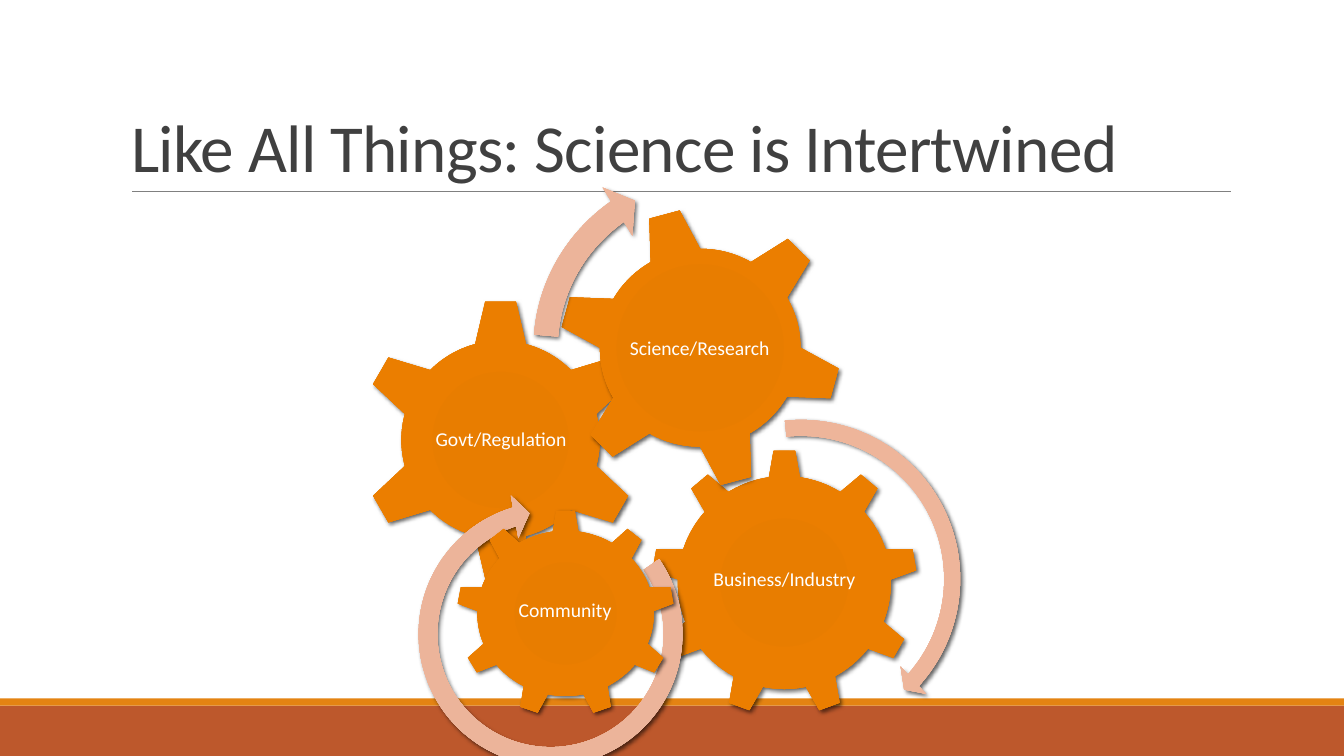
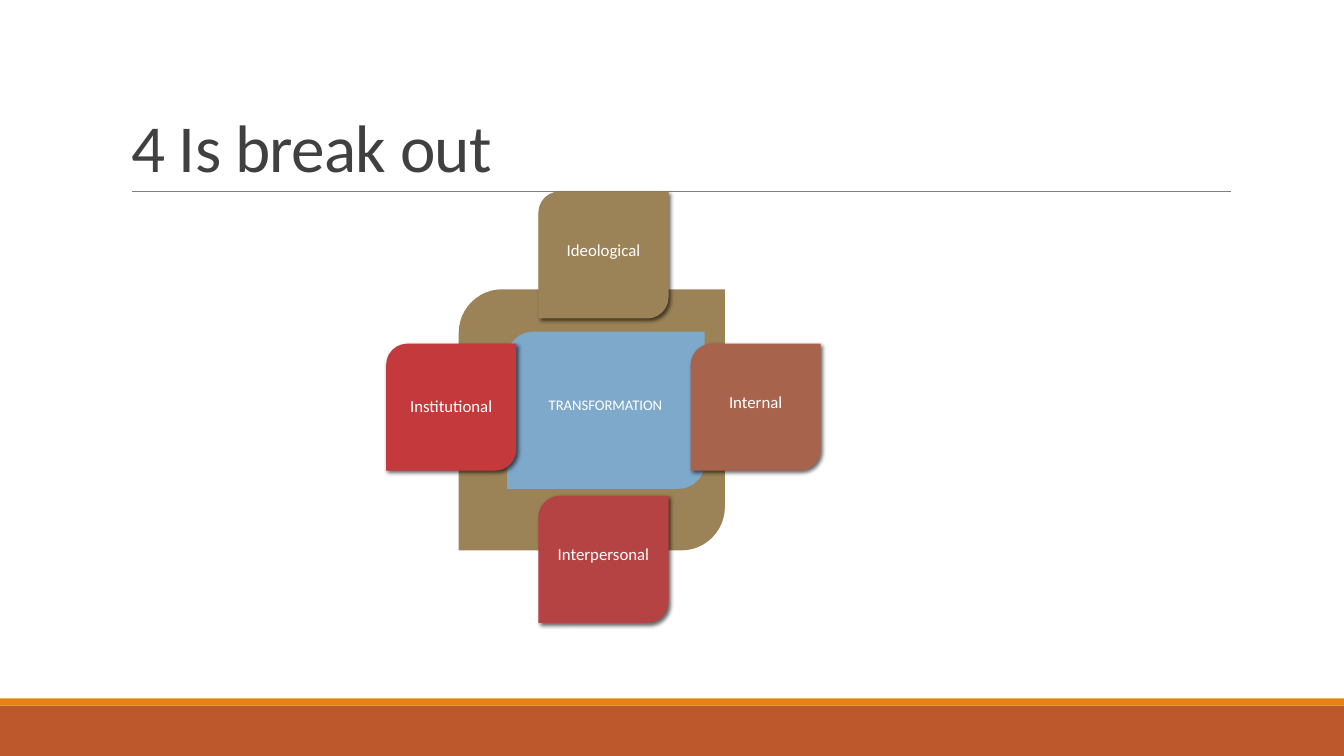
from lxml.etree import SubElement
from pptx import Presentation
from pptx.dml.color import RGBColor
from pptx.enum.shapes import MSO_CONNECTOR, MSO_SHAPE
from pptx.enum.text import MSO_ANCHOR, MSO_AUTO_SIZE, PP_ALIGN
from pptx.oxml import parse_xml
from pptx.oxml.ns import nsdecls, qn
from pptx.util import Inches, Pt

FONT = "Calibri"
COLORS = {
    "band": "BD582C", "stripe": "E48312", "rule": "808080",
    "title": "404040", "label": "FFFFFF",
    "olive": "9B8357", "brown": "A8634D", "rose": "B64343",
    "red": "C4393B", "blue": "7EA9CA",
}
GRADIENTS = {
    "gear": [(0, "E57B00"), (34, "E87D00"), (70, "EB7E00"), (100, "EF8407")],
    "arrow": [(0, "E8B196"), (34, "E9B399"), (70, "EEB59A"), (100, "F3C0A8")],
}

# Slide 1: gears and arrows, from back to front
GEARS_TITLE = "Like All Things: Science is Intertwined"
GEARS = [  # label, label area, gear shape, gear area, rotation
    ("Business/Industry", (6.99, 5.08, 1.58, 1.36),
     MSO_SHAPE.GEAR_9, (6.46, 4.46, 2.64, 2.64), 0),
    ("Govt/Regulation", (4.27, 3.67, 1.4, 1.39),
     MSO_SHAPE.GEAR_6, (3.56, 2.96, 2.81, 2.81), 0),
    ("Science/Research", (6.15, 2.67, 1.58, 1.58),
     MSO_SHAPE.GEAR_6, (5.53, 2.05, 2.83, 2.8), 345),
]
FRONT_GEAR = ("Community", (4.96, 5.54, 1.29, 1.05),
              MSO_SHAPE.GEAR_9, (4.53, 5.06, 2.16, 2.05), 0)
ARROWS = [  # area, rotation, band %, head / end / start degrees, head %
    ((6.26, 4.06, 3.37, 3.37), 0, (4.7, 4.98, 42.01, 264.2, 5.5)),
    ((4.03, 4.86, 2.86, 2.86), 78.1, (6.5, 7.17, 174.82, 247.3, 7.5)),
    ((5.13, 1.49, 4.18, 3.99), 9.8, (6, 6.57, 221.9, 175.14, 7)),
]

# Slide 2: four cards around a centre
CARDS_TITLE = "4 Is break out"
CARDS = [  # label, colour, direction from the centre, label height
    ("Ideological", "olive", (0, -1), 0.44),
    ("Internal", "brown", (1, 0), 0.44),
    ("Interpersonal", "rose", (0, 1), 0.44),
    ("Institutional", "red", (-1, 0), 0.52),
]
CARD_WIDTH, CARD_HEIGHT, CARD_REACH = 1.29, 1.26, 1.51
CARD_CENTRE = (5.34, 3.41)  # left and top of a card with no offset
LABEL_WIDTH, LABEL_TOP = 1.09, 0.37


def rgb(name):
    return RGBColor.from_string(COLORS[name])


def add_plain(page, kind, area, color=None):
    shape = page.shapes.add_shape(kind, *map(Inches, area))
    shape.shadow.inherit = False
    shape.line.fill.background()
    if color:
        shape.fill.solid()
        shape.fill.fore_color.rgb = rgb(color)
    return shape


def add_shadow(shape):
    effects = shape.element.spPr.find(qn("a:effectLst"))
    effects.append(parse_xml(
        f'<a:outerShdw {nsdecls("a")} blurRad="{Pt(3)}" dist="{Pt(2)}" '
        'dir="2700000" algn="ctr" rotWithShape="0">'
        '<a:srgbClr val="000000"><a:alpha val="60000"/></a:srgbClr>'
        '</a:outerShdw>'))


def set_gradient(shape, name):
    stops = "".join(
        f'<a:gs pos="{place * 1000}"><a:srgbClr val="{color}"/></a:gs>'
        for place, color in GRADIENTS[name])
    shape.fill.gradient()
    properties = shape.element.spPr
    properties.replace(properties.find(qn("a:gradFill")), parse_xml(
        f'<a:gradFill {nsdecls("a")} rotWithShape="1"><a:gsLst>{stops}</a:gsLst>'
        '<a:path path="circle"><a:fillToRect l="100000" t="100000" '
        'r="100000" b="100000"/></a:path></a:gradFill>'))


def add_label(page, text, area, size):
    box = page.shapes.add_textbox(*map(Inches, area))
    frame = box.text_frame
    frame.word_wrap = True
    frame.vertical_anchor = MSO_ANCHOR.MIDDLE
    frame.margin_left = frame.margin_right = Inches(0.02)
    frame.margin_top = frame.margin_bottom = Inches(0.02)
    frame.text = text
    para = frame.paragraphs[0]
    para.alignment = PP_ALIGN.CENTER
    para.line_spacing = 0.9
    font = para.runs[0].font
    font.name, font.size, font.color.rgb = FONT, Pt(size), rgb("label")


def add_gear(page, text, label_area, kind, area, rotation):
    gear = add_plain(page, kind, area)
    gear.rotation = rotation
    set_gradient(gear, "gear")
    add_shadow(gear)
    add_label(page, text, label_area, 14)


def add_arrow(page, area, rotation, settings):
    arrow = add_plain(page, MSO_SHAPE.CIRCULAR_ARROW, area)
    arrow.rotation = rotation
    for index, value in enumerate(settings):
        is_angle = index in (1, 2, 3)
        arrow.adjustments[index] = value * 0.6 if is_angle else value / 100
    set_gradient(arrow, "arrow")
    add_shadow(arrow)


def set_title(page, text):
    frame = page.shapes.title.text_frame
    frame.text = text
    frame.vertical_anchor = MSO_ANCHOR.BOTTOM
    frame.auto_size = MSO_AUTO_SIZE.NONE
    para = frame.paragraphs[0]
    para.alignment = PP_ALIGN.LEFT
    para.line_spacing = 0.85
    span = para.runs[0]
    span.font.name, span.font.size = FONT, Pt(48)
    span.font.color.rgb = rgb("title")
    span.font._element.set("spc", "-50")


def decorate_layout(layout, page):
    """Draw the shared parts on a page, then move them to its layout."""
    band = add_plain(page, MSO_SHAPE.RECTANGLE, (0, 7, 13.33, 0.5), "band")
    stripe = add_plain(page, MSO_SHAPE.RECTANGLE, (0, 6.93, 13.33, 0.07), "stripe")
    rule = page.shapes.add_connector(
        MSO_CONNECTOR.STRAIGHT, *map(Inches, (1.31, 1.9, 12.21, 1.9)))
    rule.line.color.rgb = rgb("rule")
    rule.line.width = Pt(0.5)
    SubElement(rule.element.spPr, qn("a:effectLst"))
    for part in (band, stripe, rule):
        layout.shapes.element.append(part.element)
    for holder in layout.placeholders:
        if holder.placeholder_format.idx == 0:
            holder.left, holder.top = Inches(1.2), Inches(0.31)
            holder.width, holder.height = Inches(11), Inches(1.59)


def build_gears(page):
    set_title(page, GEARS_TITLE)
    for gear in GEARS:
        add_gear(page, *gear)
    for arrow in ARROWS:
        add_arrow(page, *arrow)
    add_gear(page, *FRONT_GEAR)


def build_cards(page):
    set_title(page, CARDS_TITLE)
    kind = MSO_SHAPE.ROUND_2_DIAG_RECTANGLE
    add_plain(page, kind, (4.55, 2.87, 2.64, 2.59), "olive")
    add_plain(page, kind, (5.03, 3.29, 1.96, 1.56), "blue")
    add_label(page, "TRANSFORMATION", (5.25, 3.75, 1.51, 0.55), 10.5)
    for text, color, direction, label_height in CARDS:
        left, top = (start + CARD_REACH * step
                     for start, step in zip(CARD_CENTRE, direction))
        card = add_plain(page, kind, (left, top, CARD_WIDTH, CARD_HEIGHT), color)
        add_shadow(card)
        label_left = left + (CARD_WIDTH - LABEL_WIDTH) / 2
        add_label(page, text,
                  (label_left, top + LABEL_TOP, LABEL_WIDTH, label_height), 12)


def main():
    deck = Presentation()
    deck.slide_width, deck.slide_height = Inches(13.33), Inches(7.5)
    layout = deck.slide_layouts[5]
    pages = [deck.slides.add_slide(layout) for _ in range(2)]
    decorate_layout(layout, pages[0])
    build_gears(pages[0])
    build_cards(pages[1])
    deck.save("out.pptx")


if __name__ == "__main__":
    main()
